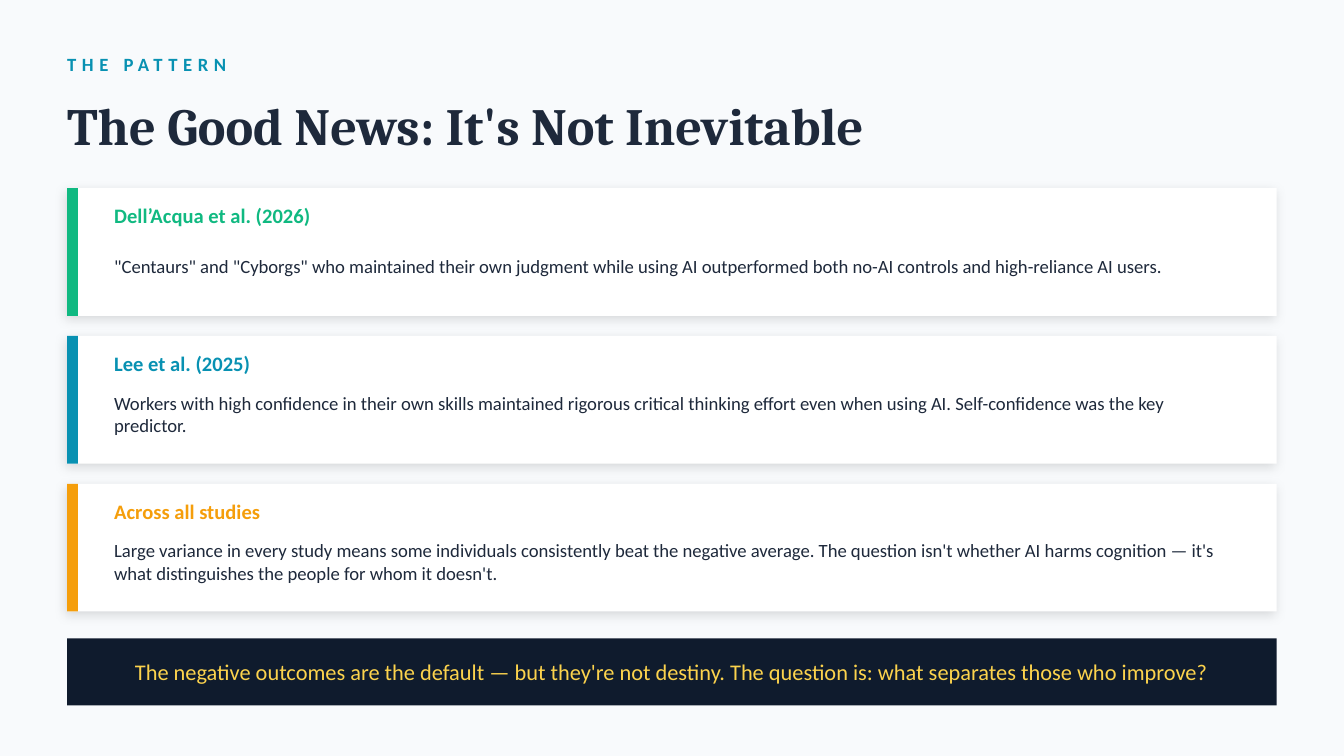
from dataclasses import dataclass

import lxml.etree
import pptx
import pptx.dml.color
import pptx.enum.shapes
import pptx.enum.text
import pptx.oxml.ns
import pptx.shapes.autoshape
import pptx.slide
import pptx.util
from pptx.util import Inches


@dataclass(frozen=True)
class Theme:
    """Colours, fonts and type sizes of the slide."""

    background: str = "F8FAFC"
    ink: str = "1E293B"
    white: str = "FFFFFF"
    navy: str = "0F1B2D"
    yellow: str = "FCD34D"
    green: str = "10B981"
    teal: str = "0891B2"
    amber: str = "F59E0B"
    shadow: str = "000000"
    body_font: str = "Calibri"
    title_font: str = "Cambria"
    title_size: int = 28
    banner_size: int = 12
    heading_size: int = 11
    body_size: int = 10


@dataclass(frozen=True)
class Box:
    """Position and size in inches."""

    left: float
    top: float
    width: float
    height: float

    def lengths(self) -> tuple[pptx.util.Length, ...]:
        """Return the four values as lengths."""
        return tuple(Inches(value) for value in (self.left, self.top, self.width, self.height))


@dataclass(frozen=True)
class TextStyle:
    """Look of a single-run text."""

    size: int
    color: str
    bold: bool = False
    font: str = Theme.body_font
    centered: bool = False
    spacing: int = 0


@dataclass(frozen=True)
class Finding:
    """One study card."""

    source: str
    summary: str
    accent: str


THEME = Theme()
SLIDE_WIDTH = 10
SLIDE_HEIGHT = SLIDE_WIDTH * 9 / 16
MARGIN, CONTENT_WIDTH = 0.5, 9
CARD_TOP, CARD_HEIGHT, CARD_PITCH = 1.4, 0.95, 1.1

FINDINGS = (
    Finding(
        "Dell’Acqua et al. (2026)",
        '"Centaurs" and "Cyborgs" who maintained their own judgment while using AI '
        "outperformed both no-AI controls and high-reliance AI users.",
        THEME.green,
    ),
    Finding(
        "Lee et al. (2025)",
        "Workers with high confidence in their own skills maintained rigorous critical "
        "thinking effort even when using AI. Self-confidence was the key predictor.",
        THEME.teal,
    ),
    Finding(
        "Across all studies",
        "Large variance in every study means some individuals consistently beat the negative "
        "average. The question isn't whether AI harms cognition — it's what distinguishes "
        "the people for whom it doesn't.",
        THEME.amber,
    ),
)


def rgb(color: str) -> pptx.dml.color.RGBColor:
    """Convert a hex string to a colour."""
    return pptx.dml.color.RGBColor.from_string(color)


def add_rectangle(slide: pptx.slide.Slide, box: Box, color: str) -> pptx.shapes.autoshape.Shape:
    """Draw a flat rectangle without outline."""
    shape = slide.shapes.add_shape(pptx.enum.shapes.MSO_SHAPE.RECTANGLE, *box.lengths())
    shape.shadow.inherit = False
    shape.fill.solid()
    shape.fill.fore_color.rgb = rgb(color)
    shape.line.fill.background()
    return shape


def add_soft_shadow(shape: pptx.shapes.autoshape.Shape) -> None:
    """Give a shape a faint outer shadow."""
    qualified = pptx.oxml.ns.qn
    effects = shape.element.spPr.find(qualified("a:effectLst"))
    shadow = lxml.etree.SubElement(
        effects,
        qualified("a:outerShdw"),
        blurRad=str(pptx.util.Pt(6)),
        dist=str(pptx.util.Pt(2)),
        dir=str(135 * 60000),
        algn="bl",
        rotWithShape="0",
    )
    color = lxml.etree.SubElement(shadow, qualified("a:srgbClr"), val=THEME.shadow)
    lxml.etree.SubElement(color, qualified("a:alpha"), val="12000")


def add_text(slide: pptx.slide.Slide, box: Box, text: str, style: TextStyle) -> None:
    """Place one vertically centred paragraph without insets."""
    frame = slide.shapes.add_textbox(*box.lengths()).text_frame
    frame.word_wrap = True
    frame.vertical_anchor = pptx.enum.text.MSO_ANCHOR.MIDDLE
    frame.margin_left = frame.margin_top = frame.margin_right = frame.margin_bottom = 0
    frame.text = text
    paragraph = frame.paragraphs[0]
    if style.centered:
        paragraph.alignment = pptx.enum.text.PP_ALIGN.CENTER
    run = paragraph.runs[0]
    run.font.name = style.font
    run.font.size = pptx.util.Pt(style.size)
    run.font.bold = style.bold
    run.font.color.rgb = rgb(style.color)
    if style.spacing:
        run.font._element.set("spc", str(style.spacing * 100))


def add_card(slide: pptx.slide.Slide, top: float, finding: Finding) -> None:
    """Draw a card with accent bar, heading and summary."""
    add_soft_shadow(add_rectangle(slide, Box(MARGIN, top, CONTENT_WIDTH, CARD_HEIGHT), THEME.white))
    add_rectangle(slide, Box(MARGIN, top, 0.08, CARD_HEIGHT), finding.accent)
    text_left = MARGIN + 0.35
    add_text(slide, Box(text_left, top + 0.08, 2.5, 0.25), finding.source,
             TextStyle(THEME.heading_size, finding.accent, bold=True))
    add_text(slide, Box(text_left, top + 0.33, 8.3, 0.5), finding.summary,
             TextStyle(THEME.body_size, THEME.ink))


def main() -> None:
    """Build and save the slide."""
    presentation = pptx.Presentation()
    presentation.slide_width = Inches(SLIDE_WIDTH)
    presentation.slide_height = Inches(SLIDE_HEIGHT)
    slide = presentation.slides.add_slide(presentation.slide_layouts[6])
    slide.background.fill.solid()
    slide.background.fill.fore_color.rgb = rgb(THEME.background)

    add_text(slide, Box(MARGIN, 0.3, 3, 0.35), "THE PATTERN",
             TextStyle(THEME.body_size, THEME.teal, bold=True, spacing=3))
    add_text(slide, Box(MARGIN, 0.65, CONTENT_WIDTH, 0.55), "The Good News: It's Not Inevitable",
             TextStyle(THEME.title_size, THEME.ink, bold=True, font=THEME.title_font))
    for index, finding in enumerate(FINDINGS):
        add_card(slide, CARD_TOP + index * CARD_PITCH, finding)
    add_rectangle(slide, Box(MARGIN, 4.75, CONTENT_WIDTH, 0.5), THEME.navy)
    add_text(slide, Box(MARGIN + 0.2, 4.75, CONTENT_WIDTH - 0.4, 0.5),
             "The negative outcomes are the default — but they're not destiny. "
             "The question is: what separates those who improve?",
             TextStyle(THEME.banner_size, THEME.yellow, centered=True))
    presentation.save("out.pptx")


if __name__ == "__main__":
    main()
